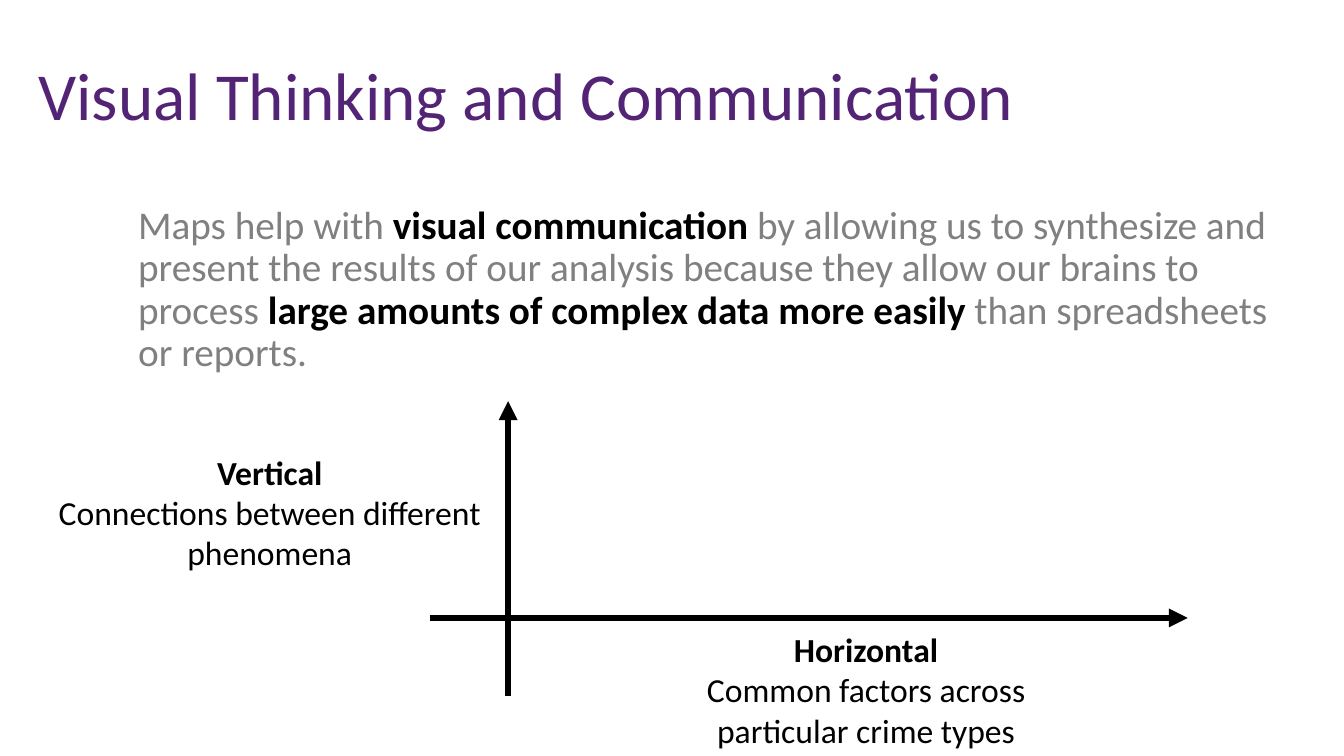
from dataclasses import dataclass

from lxml import etree
from pptx import Presentation
from pptx.dml.color import RGBColor
from pptx.enum import shapes, text
from pptx.oxml.ns import qn
from pptx.util import Inches, Pt


@dataclass(frozen=True)
class Theme:
    font: str = "Calibri"
    purple: RGBColor = RGBColor(0x53, 0x24, 0x76)
    gray: RGBColor = RGBColor(0x80, 0x80, 0x80)
    black: RGBColor = RGBColor(0, 0, 0)
    title_size: int = 48
    body_size: int = 28
    label_size: int = 24
    axis_width: float = 4.5


THEME = Theme()


def place(shape, left, top, width, height):
    shape.left, shape.top = Inches(left), Inches(top)
    shape.width, shape.height = Inches(width), Inches(height)


def add_span(para, words, size, color, bold=False):
    span = para.add_run()
    span.text = words
    span.font.name = THEME.font
    span.font.size = Pt(size)
    span.font.bold = bold
    span.font.color.rgb = color


def fill_title(page, words):
    title = page.shapes.title
    place(title, 0.28, 0.25, 11.5, 1.45)
    frame = title.text_frame
    frame.auto_size = text.MSO_AUTO_SIZE.NONE
    frame.vertical_anchor = text.MSO_ANCHOR.MIDDLE
    para = frame.paragraphs[0]
    para.alignment = text.PP_ALIGN.LEFT
    para.line_spacing = 0.9
    add_span(para, words, THEME.title_size, THEME.purple)


def fill_body(page, spans):
    body = page.placeholders[1]
    place(body, 1.27, 1.99, 11.5, 1.93)
    frame = body.text_frame
    frame.auto_size = text.MSO_AUTO_SIZE.NONE
    para = frame.paragraphs[0]
    para.line_spacing = 0.9
    para.space_before = Pt(10)
    properties = para._p.get_or_add_pPr()
    properties.set("marL", "0")
    properties.set("indent", "0")
    etree.SubElement(properties, qn("a:buNone"))
    for words, strong in spans:
        color = THEME.black if strong else THEME.gray
        add_span(para, words, THEME.body_size, color, strong)


def add_axis(page, start, end):
    points = [Inches(value) for value in (*start, *end)]
    axis = page.shapes.add_connector(shapes.MSO_CONNECTOR.STRAIGHT, *points)
    axis.line.color.rgb = THEME.black
    axis.line.width = Pt(THEME.axis_width)
    etree.SubElement(axis.line._get_or_add_ln(), qn("a:tailEnd"), type="triangle")
    etree.SubElement(axis._element.spPr, qn("a:effectLst"))


def add_axis_label(page, left, top, width, heading, detail):
    box = page.shapes.add_textbox(Inches(left), Inches(top), Inches(width), Inches(1.31))
    frame = box.text_frame
    frame.word_wrap = True
    frame.auto_size = text.MSO_AUTO_SIZE.SHAPE_TO_FIT_TEXT
    for para, words, bold in (
        (frame.paragraphs[0], heading, True),
        (frame.add_paragraph(), detail, False),
    ):
        para.alignment = text.PP_ALIGN.CENTER
        add_span(para, words, THEME.label_size, THEME.black, bold)


def main():
    deck = Presentation()
    deck.slide_width, deck.slide_height = Inches(13.33), Inches(7.5)
    page = deck.slides.add_slide(deck.slide_layouts[1])

    fill_title(page, "Visual Thinking and Communication")
    fill_body(page, [
        ("Maps help with ", False),
        ("visual communication ", True),
        ("by allowing us to synthesize and present the results of our analysis "
         "because they allow our brains to process ", False),
        ("large amounts of complex data more easily ", True),
        ("than spreadsheets or reports.", False),
    ])
    add_axis(page, (5.04, 6.9), (5.04, 3.98))
    add_axis(page, (4.26, 6.13), (11.78, 6.13))
    add_axis_label(page, 6.3, 6.19, 4.58, "Horizontal",
                   "Common factors across particular crime types")
    add_axis_label(page, 0.43, 4.43, 4.49, "Vertical",
                   "Connections between different phenomena")
    deck.save("out.pptx")


if __name__ == "__main__":
    main()
